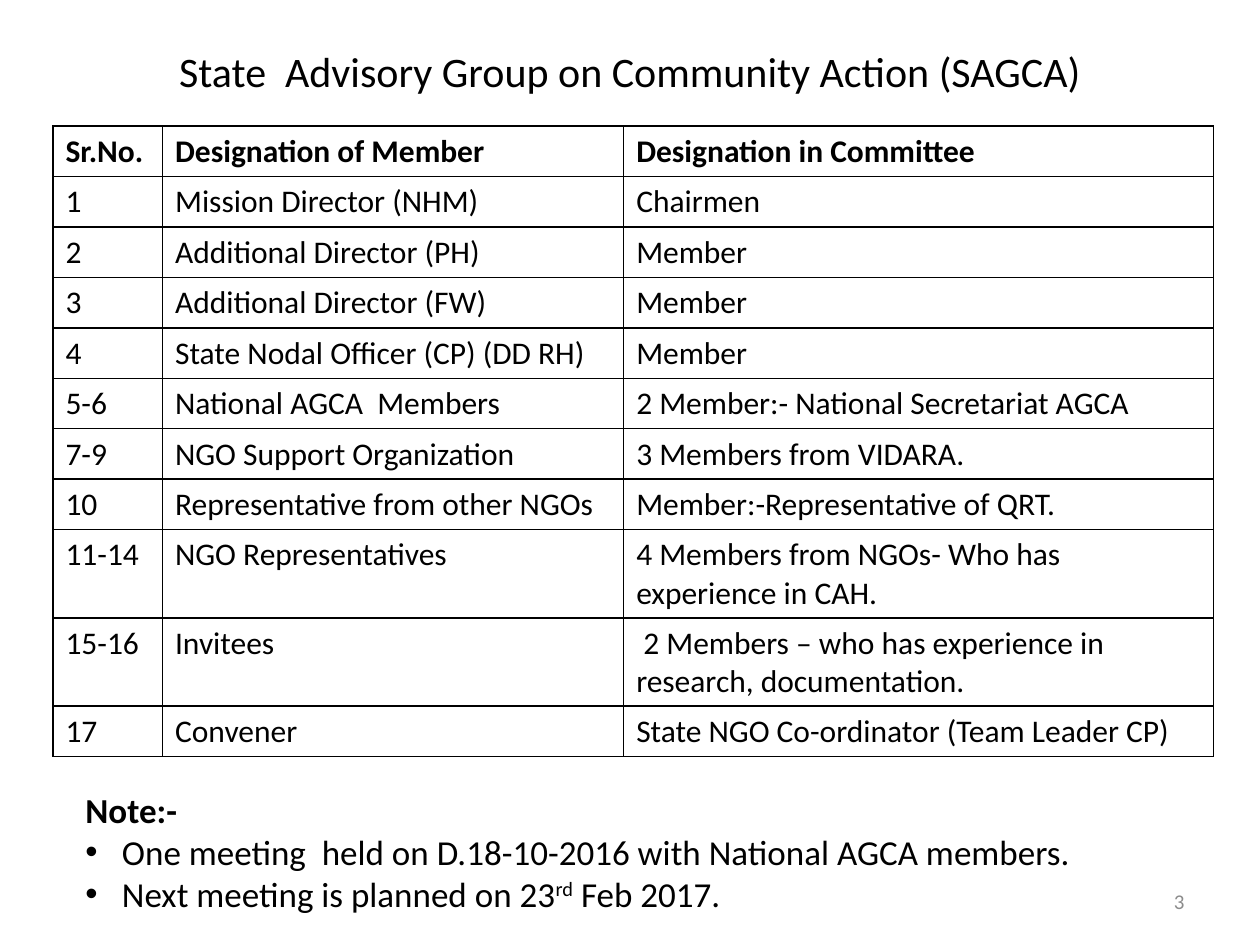
from lxml import etree
from pptx import Presentation
from pptx.dml.color import RGBColor
from pptx.enum.text import MSO_ANCHOR, PP_ALIGN
from pptx.oxml.ns import qn
from pptx.util import Inches, Pt

LEFT, CENTER, RIGHT, JUSTIFY = (
    PP_ALIGN.LEFT, PP_ALIGN.CENTER, PP_ALIGN.RIGHT, PP_ALIGN.JUSTIFY)
MIDDLE = MSO_ANCHOR.MIDDLE

FONT = "Calibri"
BLACK, WHITE, GRAY = "000000", "FFFFFF", "8C8C8C"

COLUMN_WIDTHS = [0.87, 3.66, 4.68]
ROW_HEIGHT = 0.4  # rows grow to fit their text
MEMBERS = [
    ("Sr.No.", "Designation of Member", "Designation in Committee"),
    ("1", "Mission Director (NHM)", "Chairmen"),
    ("2", "Additional Director (PH)", "Member"),
    ("3", "Additional Director (FW)", "Member"),
    ("4", "State Nodal Officer (CP) (DD RH)", "Member"),
    ("5-6", "National AGCA  Members", "2 Member:- National Secretariat AGCA"),
    ("7-9", "NGO Support Organization", "3 Members from VIDARA."),
    ("10", "Representative from other NGOs", "Member:-Representative of QRT."),
    ("11-14", "NGO Representatives",
     "4 Members from NGOs- Who has experience in CAH."),
    ("15-16", "Invitees",
     " 2 Members – who has experience in research, documentation."),
    ("17", "Convener", "State NGO Co-ordinator (Team Leader CP)"),
]


def rgb(color):
    return RGBColor.from_string(color)


def add_span(para, text, size=18, color=BLACK, bold=False, raised=False):
    span = para.add_run()
    span.text = text
    span.font.name = FONT
    span.font.size = Pt(size)
    span.font.bold = bold
    span.font.color.rgb = rgb(color)
    if raised:
        span.font._element.set("baseline", "30000")


def add_box(slide, left, top, width, height):
    box = slide.shapes.add_textbox(
        Inches(left), Inches(top), Inches(width), Inches(height))
    frame = box.text_frame
    frame.word_wrap = True
    frame.vertical_anchor = MIDDLE
    return frame


def add_line(slide, text, left, top, width, height, align=LEFT, **style):
    para = add_box(slide, left, top, width, height).paragraphs[0]
    para.alignment = align
    add_span(para, text, **style)


def add_bullet(para, indent):
    properties = para._p.get_or_add_pPr()
    properties.set("marL", str(Inches(indent)))
    properties.set("indent", str(-Inches(indent)))
    etree.SubElement(properties, qn("a:buFont"), typeface="Arial")
    etree.SubElement(properties, qn("a:buChar"), char="•")


def set_borders(cell, color, width):
    properties = cell._tc.get_or_add_tcPr()
    for index, side in enumerate(("lnL", "lnR", "lnT", "lnB")):
        line = etree.Element(qn(f"a:{side}"), w=str(Pt(width)))
        fill = etree.SubElement(line, qn("a:solidFill"))
        etree.SubElement(fill, qn("a:srgbClr"), val=color)
        properties.insert(index, line)


def add_member_table(slide):
    table = slide.shapes.add_table(
        len(MEMBERS), len(COLUMN_WIDTHS), Inches(0.42), Inches(1),
        Inches(sum(COLUMN_WIDTHS)), Inches(ROW_HEIGHT * len(MEMBERS))).table
    for column, width in zip(table.columns, COLUMN_WIDTHS):
        column.width = Inches(width)
    for row_index, texts in enumerate(MEMBERS):
        for column_index, text in enumerate(texts):
            cell = table.cell(row_index, column_index)
            cell.fill.solid()
            cell.fill.fore_color.rgb = rgb(WHITE)
            set_borders(cell, BLACK, 1)
            add_span(cell.text_frame.paragraphs[0], text, bold=row_index == 0)


def add_notes_box(slide):
    frame = add_box(slide, 0.58, 6.17, 9, 1.17)
    heading = frame.paragraphs[0]
    heading.alignment = JUSTIFY
    add_span(heading, "Note:-", size=20, bold=True)

    meetings = [
        [("One meeting  held on D.18-10-2016 with National AGCA members.", False)],
        [("Next meeting is planned on 23", False), ("rd", True),
         (" Feb 2017.", False)],
    ]
    for spans in meetings:
        para = frame.add_paragraph()
        add_bullet(para, 0.29)
        for text, raised in spans:
            add_span(para, text, size=20, raised=raised)


def main():
    deck = Presentation()
    deck.slide_width, deck.slide_height = Inches(10), Inches(7.5)
    slide = deck.slides.add_slide(deck.slide_layouts[6])

    # Title
    add_line(slide, "State  Advisory Group on Community Action (SAGCA)",
             0.5, 0.3, 9, 0.53, align=CENTER, size=24)
    # Committee members
    add_member_table(slide)
    # Page number
    add_line(slide, "3", 7.17, 6.95, 2.33, 0.4,
             align=RIGHT, size=12, color=GRAY)
    # Meeting notes
    add_notes_box(slide)

    deck.save("out.pptx")


if __name__ == "__main__":
    main()
